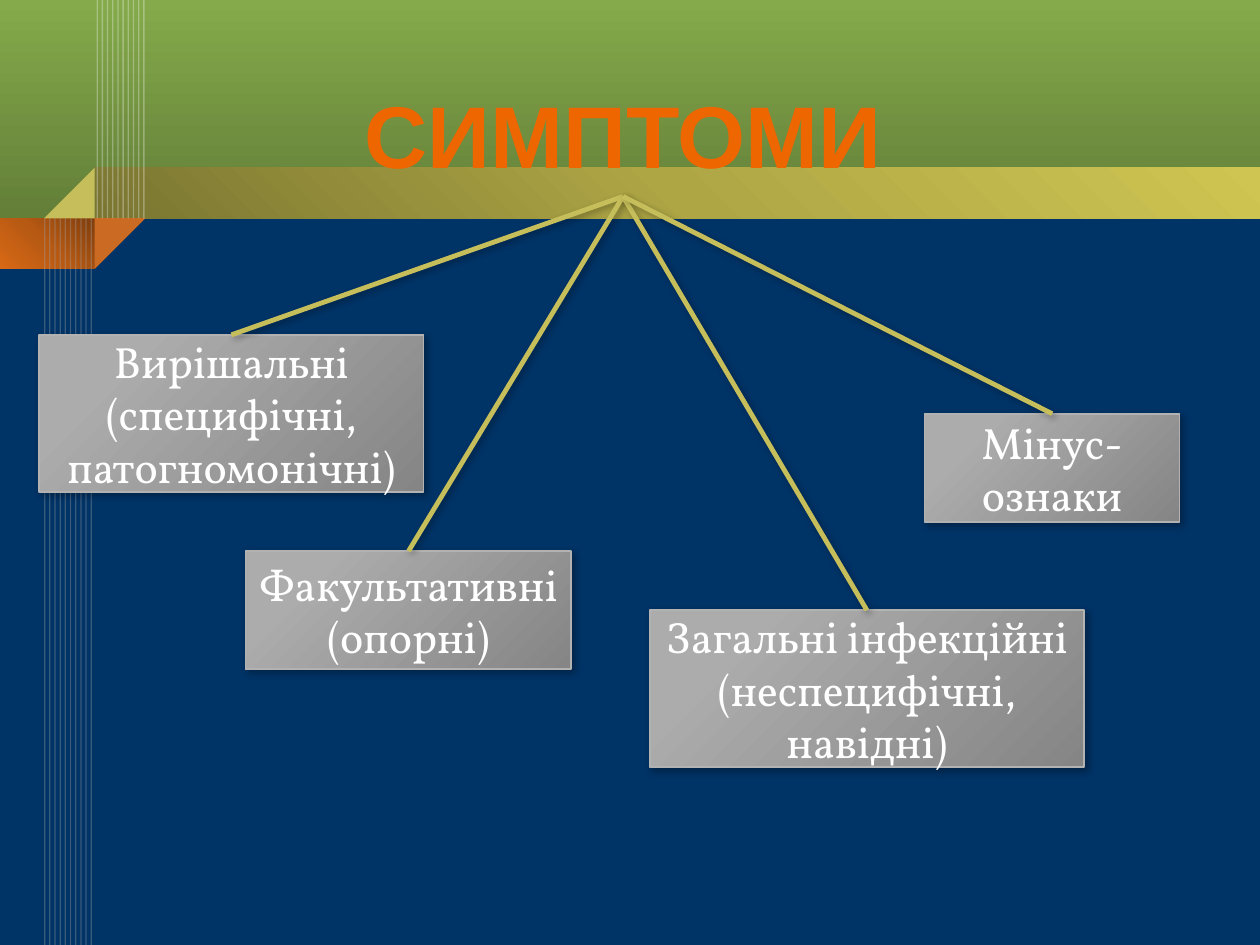
from dataclasses import dataclass

from pptx import Presentation
from pptx.dml.color import RGBColor
from pptx.enum import shapes, text
from pptx.oxml import parse_xml
from pptx.oxml.ns import nsdecls, qn
from pptx import util as u

Cm = u.Cm


@dataclass(frozen=True)
class Theme:
    bg: str = "003366"
    title: str = "EE6600"
    body: str = "FFFFFF"
    ray: str = "C6BE5A"
    fold: str = "CB6B23"
    border: str = "B2B2B2"
    top_stripe: str = "FFFFFF"
    side_stripe: str = "A6A6A6"
    green: tuple = ((0, "84AA4B"), (100, "637F38"))
    gold: tuple = ((0, "7A7531"), (50, "AEA645"), (100, "CEC552"))
    orange: tuple = ((0, "803E0D"), (50, "B65913"), (100, "D86916"))
    grey: tuple = ((0, "858585"), (80, "ACACAC"), (100, "ADADAD"))
    title_font: str = "Arial"
    body_font: str = "Vollkorn"
    title_size: int = 50
    body_size: int = 25


T = Theme()


def rgb(value):
    return RGBColor.from_string(value)


def set_gradient(sp, stops, angle=None):
    """Linear at an angle, or circular from the top right corner without one."""
    gs = "".join(f'<a:gs pos="{pos * 1000}"><a:srgbClr val="{color}"/></a:gs>'
                 for pos, color in stops)
    if angle is None:
        course = ('<a:path path="circle">'
                  '<a:fillToRect l="100000" t="0" r="0" b="100000"/></a:path>')
    else:
        course = f'<a:lin ang="{angle * 60000}" scaled="0"/>'
    sp._element.spPr.find(qn("a:prstGeom")).addnext(parse_xml(
        f'<a:gradFill {nsdecls("a")} rotWithShape="1">'
        f'<a:gsLst>{gs}</a:gsLst>{course}</a:gradFill>'))


def set_effects(sp, shadow):
    spPr = sp._element.spPr
    for old in spPr.findall(qn("a:effectLst")):
        spPr.remove(old)
    inner = ('<a:outerShdw blurRad="50800" dist="25400" dir="2700000" rotWithShape="0">'
             '<a:srgbClr val="000000"><a:alpha val="30000"/></a:srgbClr>'
             '</a:outerShdw>') if shadow else ""
    spPr.append(parse_xml(f'<a:effectLst {nsdecls("a")}>{inner}</a:effectLst>'))


def add_block(s, box, kind=shapes.MSO_SHAPE.RECTANGLE, fill=None, stops=None,
              angle=None, border=None, rotation=0, shadow=False):
    sp = s.shapes.add_shape(kind, *map(Cm, box))
    sp.rotation = rotation
    if stops:
        set_gradient(sp, stops, angle)
    else:
        sp.fill.solid()
        sp.fill.fore_color.rgb = rgb(fill)
    if border:
        sp.line.color.rgb = rgb(border)
        sp.line.width = u.Pt(1)
    else:
        sp.line.fill.background()
    set_effects(sp, shadow)
    return sp


def add_line(s, color, width, ends=(0, 0, 0, 0), alpha=None, shadow=False):
    line = s.shapes.add_connector(shapes.MSO_CONNECTOR.STRAIGHT, *map(Cm, ends))
    line.line.color.rgb = rgb(color)
    line.line.width = u.Pt(width)
    if alpha:
        clr = line._element.spPr.find(".//" + qn("a:srgbClr"))
        clr.append(parse_xml(f'<a:alpha {nsdecls("a")} val="{alpha * 1000}"/>'))
    set_effects(line, shadow)
    return line


def write(sp, words, font=T.body_font, size=T.body_size, color=T.body, bold=False):
    tf = sp.text_frame
    tf.word_wrap = True
    tf.vertical_anchor = text.MSO_ANCHOR.MIDDLE
    p = tf.paragraphs[0]
    p.alignment = text.PP_ALIGN.CENTER
    r = p.add_run()
    r.text = words
    r.font.name, r.font.size, r.font.bold = font, u.Pt(size), bold
    r.font.color.rgb = rgb(color)


def add_stripes(s, box, color, alpha, count=10):
    x, y, w, h = box
    for i in range(count):
        sx = x + i * w / (count - 1)
        add_line(s, color, 0.75, (sx, y, sx, y + h), alpha)


def add_backdrop(s, box):
    """Header bands, folded ribbon and the two bundles of stripes."""
    x, y, w, h = box
    head, fold, ribbon = 4.4, 1.02, 1.91
    triangle = shapes.MSO_SHAPE.RIGHT_TRIANGLE
    add_block(s, (x, y, w, head), stops=T.green, angle=90)
    add_block(s, (x + ribbon, y + head - fold, w - ribbon, fold), stops=T.gold, angle=315)
    add_block(s, (x, y + head, ribbon, fold), stops=T.orange)
    add_block(s, (x + ribbon, y + head, fold, fold), triangle, T.fold, rotation=90)
    add_block(s, (x + ribbon - fold, y + head - fold, fold, fold), triangle, T.ray,
              rotation=270)
    add_stripes(s, (x + 1.96, y, 0.94, head), T.top_stripe, 30)
    add_stripes(s, (x + 0.9, y + head, 0.94, h - head), T.side_stripe, 35)


def add_title(s, box, words):
    sp = s.shapes.add_textbox(*map(Cm, box))
    write(sp, words, T.title_font, T.title_size, T.title, bold=True)
    return sp


def add_branches(s, root, branches):
    """Grey boxes, each joined to the bottom of the root."""
    boxes = []
    for words, box in branches:
        sp = add_block(s, box, stops=T.grey, angle=225, border=T.border, shadow=True)
        write(sp, words)
        boxes.append(sp)
    for sp in boxes:
        ray = add_line(s, T.ray, 2.75, shadow=True)
        ray.begin_connect(root, 2)
        ray.end_connect(sp, 0)


def main():
    prs = Presentation()
    prs.slide_width, prs.slide_height = Cm(25.4), Cm(19.05)
    s = prs.slides.add_slide(prs.slide_layouts[6])
    s.background.fill.solid()
    s.background.fill.fore_color.rgb = rgb(T.bg)

    add_backdrop(s, (0, 0, 25.4, 19.05))
    title = add_title(s, (0.99, 1.42, 23.14, 2.54), "СИМПТОМИ")
    add_branches(s, title, [
        ("Вирішальні (специфічні, патогномонічні)", (0.79, 6.75, 7.75, 3.17)),
        ("Факультативні (опорні)", (4.95, 11.11, 6.57, 2.38)),
        ("Загальні інфекційні (неспецифічні, навідні)", (13.1, 12.3, 8.75, 3.17)),
        ("Мінус-ознаки", (18.64, 8.34, 5.14, 2.18)),
    ])
    prs.save("out.pptx")


if __name__ == "__main__":
    main()
